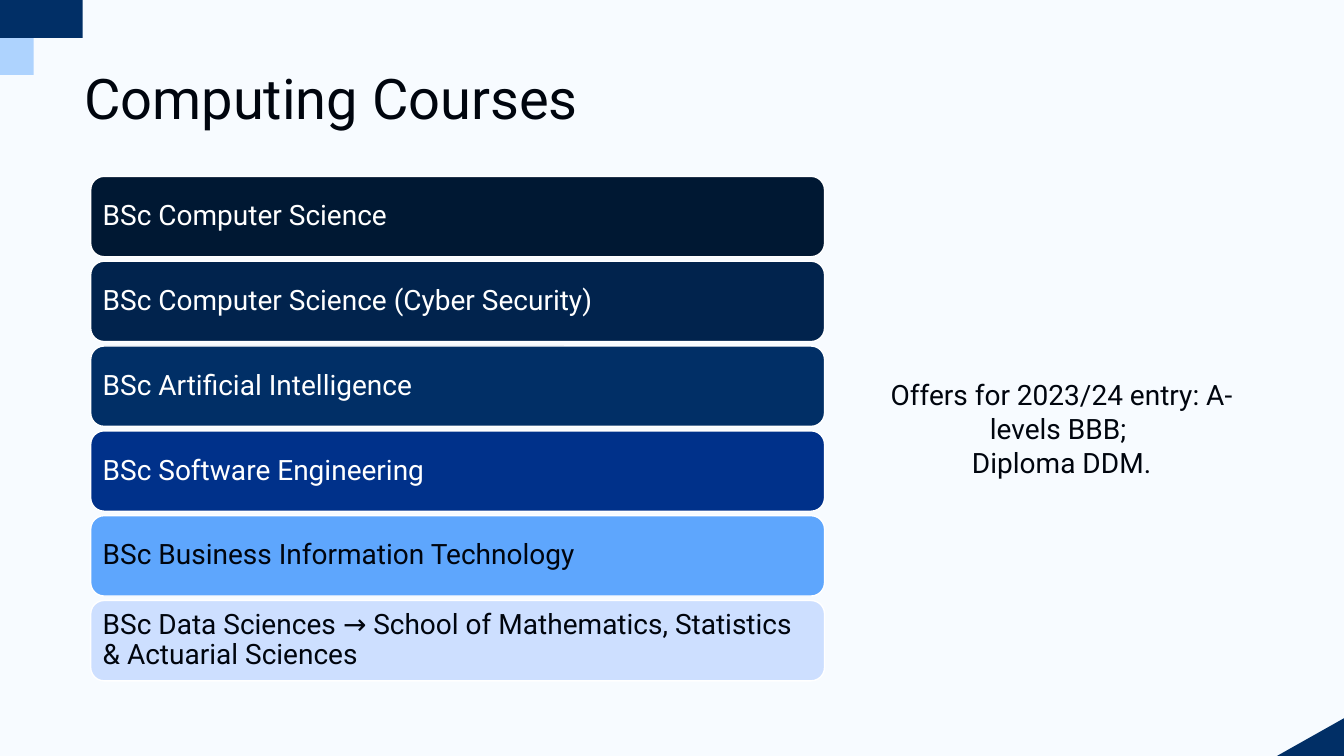
from dataclasses import dataclass

from pptx import Presentation
from pptx.dml.color import RGBColor
from pptx.enum.shapes import MSO_SHAPE as Preset
from pptx.enum.text import MSO_ANCHOR as Anchor, PP_ALIGN as Align
from pptx.util import Emu, Inches, Pt

WIDTH, HEIGHT = Inches(13.33), Inches(7.5)
FONT = "Roboto"
INK, WHITE, NAVY, SKY, PALE = "00050E", "FFFFFF", "012F66", "AED3FE", "F7FBFF"


@dataclass(frozen=True)
class Area:
    """A rectangle in percent of the slide's width and height."""
    left: float
    top: float
    width: float
    height: float

    def emu(self) -> tuple[Emu, Emu, Emu, Emu]:
        return (Emu(int(WIDTH * self.left / 100)), Emu(int(HEIGHT * self.top / 100)),
                Emu(int(WIDTH * self.width / 100)), Emu(int(HEIGHT * self.height / 100)))


@dataclass(frozen=True)
class Course:
    name: str
    fill: str
    ink: str = WHITE


COURSES = [
    Course("BSc Computer Science", "001833"),
    Course("BSc Computer Science (Cyber Security)", "01234D"),
    Course("BSc Artificial Intelligence", NAVY),
    Course("BSc Software Engineering", "00318A"),
    Course("BSc Business Information Technology", "5EA6FD", INK),
    Course("BSc Data Sciences → School of Mathematics, Statistics & Actuarial Sciences",
           "CDDFFF", INK),
]
FIRST_BAR = Area(6.75, 23.33, 54.6, 10.63)
BAR_PITCH = 11.22
TITLE_AREA = Area(5.53, 8.67, 60, 9.47)
OFFERS_AREA = Area(65.49, 49.33, 27, 14.8)
CORNER_BLOCKS = [(Area(0, 4.95, 2.5, 4.95), SKY), (Area(0, 0, 6.15, 5), NAVY)]
CORNER_TRIANGLE = [(94.65, 100), (100, 95.1), (100, 100)]


def rgb(color: str) -> RGBColor:
    return RGBColor.from_string(color)


def write(shape, text: str, *, size: float = 20, color: str = INK, align=Align.LEFT,
          anchor=Anchor.TOP, spacing: float = 1.0) -> None:
    """Fill a shape with one paragraph per line of text."""
    frame = shape.text_frame
    frame.word_wrap = True
    frame.vertical_anchor = anchor
    frame.text = text
    for para in frame.paragraphs:
        para.alignment = align
        para.line_spacing = spacing
        para.font.name = FONT
        para.font.size = Pt(size)
        para.font.color.rgb = rgb(color)


def paint(shape, fill: str, line: str | None = None) -> None:
    shape.shadow.inherit = False
    shape.fill.solid()
    shape.fill.fore_color.rgb = rgb(fill)
    if line:
        shape.line.color.rgb = rgb(line)
        shape.line.width = Pt(1)
    else:
        shape.line.fill.background()


def draw_decoration(page) -> None:
    page.background.fill.solid()
    page.background.fill.fore_color.rgb = rgb(PALE)
    for area, color in CORNER_BLOCKS:
        paint(page.shapes.add_shape(Preset.RECTANGLE, *area.emu()), color)
    start, *others = CORNER_TRIANGLE
    outline = page.shapes.build_freeform(*start, scale=(WIDTH / 100, HEIGHT / 100))
    outline.add_line_segments(others)
    paint(outline.convert_to_shape(), NAVY)


def draw_course(page, row: int, course: Course) -> None:
    area = Area(FIRST_BAR.left, FIRST_BAR.top + row * BAR_PITCH,
                FIRST_BAR.width, FIRST_BAR.height)
    bar = page.shapes.add_shape(Preset.ROUNDED_RECTANGLE, *area.emu())
    paint(bar, course.fill, WHITE)
    frame = bar.text_frame
    frame.margin_left = frame.margin_right = Inches(0.08)
    frame.margin_top = frame.margin_bottom = Inches(0.04)
    write(bar, course.name, color=course.ink, anchor=Anchor.MIDDLE, spacing=0.9)


def main() -> None:
    deck = Presentation()
    deck.slide_width, deck.slide_height = WIDTH, HEIGHT
    page = deck.slides.add_slide(deck.slide_layouts[6])
    draw_decoration(page)
    title = page.shapes.add_textbox(*TITLE_AREA.emu())
    write(title, "Computing Courses", size=40, anchor=Anchor.MIDDLE, spacing=0.9)
    offers = page.shapes.add_textbox(*OFFERS_AREA.emu())
    write(offers, "Offers for 2023/24 entry: A-levels BBB; \nDiploma DDM.", align=Align.CENTER)
    for row, course in enumerate(COURSES):
        draw_course(page, row, course)
    deck.save("out.pptx")


if __name__ == "__main__":
    main()
